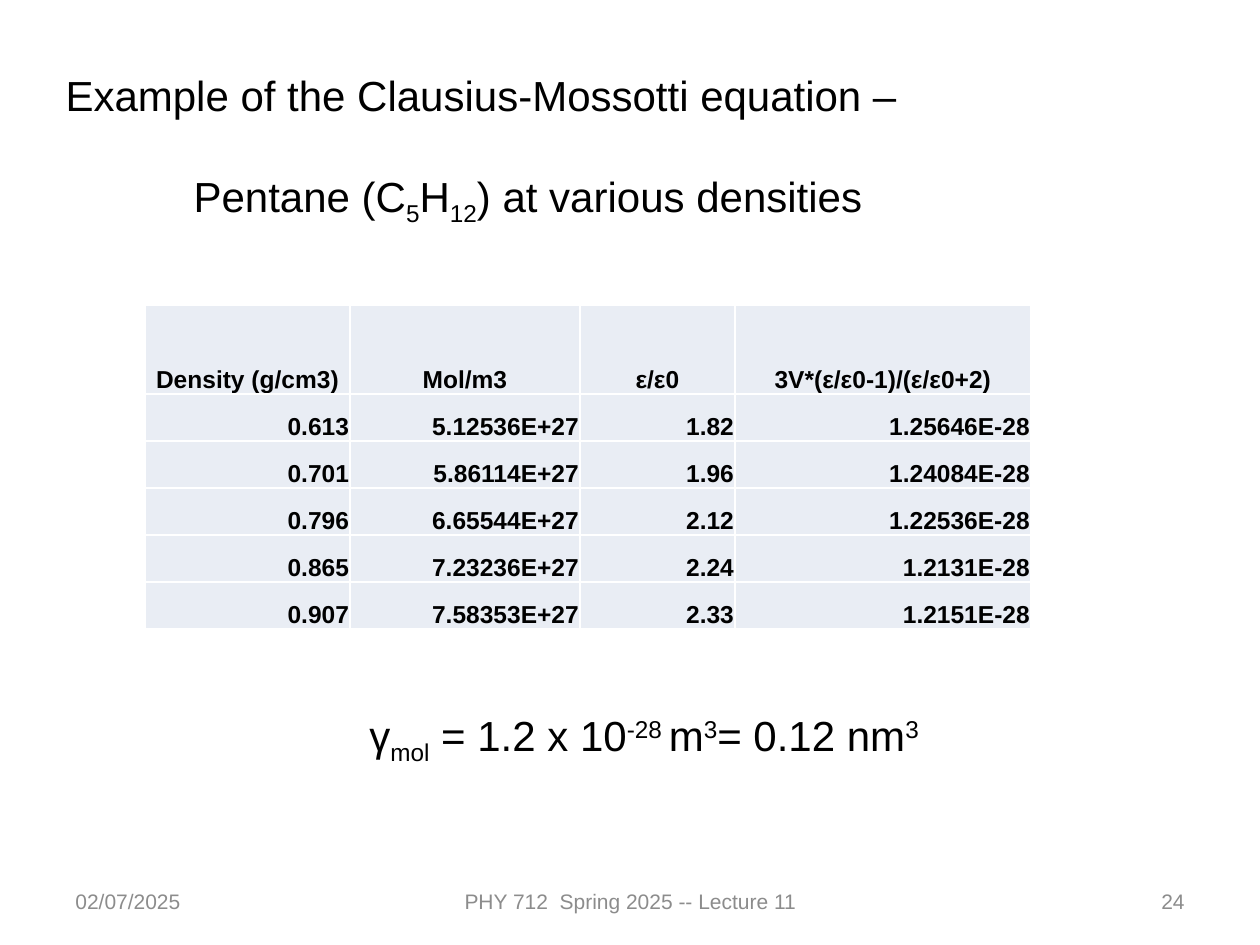
"""Build the slide on the Clausius-Mossotti equation for pentane."""
from lxml.etree import SubElement
from pptx import Presentation
from pptx.dml.color import RGBColor
from pptx.enum.text import MSO_ANCHOR, MSO_AUTO_SIZE, PP_ALIGN
from pptx.oxml.ns import qn
from pptx.util import Emu, Pt


def px(length):
    return Emu(round(length * 914400 / 126))


def write(paragraph, pieces, size, color="000000", bold=False, align=PP_ALIGN.LEFT):
    paragraph.alignment = align
    for text, baseline in pieces:
        run = paragraph.add_run()
        run.text = text
        font_format = {"name": "Arial", "size": Pt(size), "bold": bold}
        for attribute, value in font_format.items():
            setattr(run.font, attribute, value)
        run.font.color.rgb = RGBColor.from_string(color)
        if baseline:
            run.font._element.set("baseline", str(baseline * 1000))


presentation = Presentation()
presentation.slide_width, presentation.slide_height = px(1260), px(945)
slide = presentation.slides.add_slide(presentation.slide_layouts[5])

heading = slide.shapes.title
heading_box = {"left": px(53), "top": px(63), "width": px(1071), "height": px(165)}
for attribute, value in heading_box.items():
    setattr(heading, attribute, value)
heading_frame = heading.text_frame
heading_format = {
    "vertical_anchor": MSO_ANCHOR.TOP,
    "auto_size": MSO_AUTO_SIZE.NONE,
    "word_wrap": True,
}
for attribute, value in heading_format.items():
    setattr(heading_frame, attribute, value)
write(heading_frame.paragraphs[0], [("Example of the Clausius-Mossotti equation –", 0)], 24)
subject = heading_frame.add_paragraph()
subject.space_before = Pt(29)
subject._p.get_or_add_pPr().set("marL", str(px(128)))
write(
    subject,
    [("Pentane (C", 0), ("5", -25), ("H", 0), ("12", -25), (") at various densities", 0)],
    24,
)

measurements = [
    ("Density (g/cm3)", "Mol/m3", "ε/ε0", "3V*(ε/ε0-1)/(ε/ε0+2)"),
    ("0.613", "5.12536E+27", "1.82", "1.25646E-28"),
    ("0.701", "5.86114E+27", "1.96", "1.24084E-28"),
    ("0.796", "6.65544E+27", "2.12", "1.22536E-28"),
    ("0.865", "7.23236E+27", "2.24", "1.2131E-28"),
    ("0.907", "7.58353E+27", "2.33", "1.2151E-28"),
]
column_widths = [205, 230, 155, 296]
row_heights = [89] + [47] * 5
densities = slide.shapes.add_table(
    len(row_heights), len(column_widths),
    px(145), px(305), px(sum(column_widths)), px(sum(row_heights)),
).table
densities.first_row = densities.horz_banding = False
for column, width in zip(densities.columns, column_widths):
    column.width = px(width)
for row, height in zip(densities.rows, row_heights):
    row.height = px(height)

cell_format = {
    "margin_left": px(1),
    "margin_right": px(1),
    "margin_top": px(1),
    "margin_bottom": 0,
    "vertical_anchor": MSO_ANCHOR.BOTTOM,
}
for row_index, values in enumerate(measurements):
    for column_index, value in enumerate(values):
        cell = densities.cell(row_index, column_index)
        for attribute, setting in cell_format.items():
            setattr(cell, attribute, setting)
        properties = cell._tc.get_or_add_tcPr()
        for side in ("a:lnL", "a:lnR", "a:lnT", "a:lnB"):
            border = SubElement(properties, qn(side), w=str(Pt(1)))
            border_fill = SubElement(border, qn("a:solidFill"))
            SubElement(border_fill, qn("a:srgbClr"), val="FFFFFF")
        cell.fill.solid()
        cell.fill.fore_color.rgb = RGBColor.from_string("E9EDF4")
        align = PP_ALIGN.RIGHT if row_index else PP_ALIGN.CENTER
        write(cell.text_frame.paragraphs[0], [(value, 0)], 14, bold=True, align=align)

polarizability = [
    ("γ", 0), ("mol", -25), (" = 1.2 x 10", 0), ("-28 ", 30),
    ("m", 0), ("3", 30), ("= 0.12 nm", 0), ("3", 30),
]
footer = {"size": 12, "color": "8C8C8C"}
captions = [
    ((357, 703, 620, 63), polarizability, MSO_ANCHOR.TOP, {"size": 24}),
    ((63, 876, 294, 50), [("02/07/2025", 0)], MSO_ANCHOR.MIDDLE, footer),
    ((431, 876, 399, 50), [("PHY 712  Spring 2025 -- Lecture 11", 0)], MSO_ANCHOR.MIDDLE,
     {**footer, "align": PP_ALIGN.CENTER}),
    ((903, 876, 294, 50), [("24", 0)], MSO_ANCHOR.MIDDLE,
     {**footer, "align": PP_ALIGN.RIGHT}),
]
for bounds, pieces, anchor, text_format in captions:
    caption = slide.shapes.add_textbox(*map(px, bounds)).text_frame
    caption.word_wrap = True
    caption.vertical_anchor = anchor
    write(caption.paragraphs[0], pieces, **text_format)

presentation.save("out.pptx")
